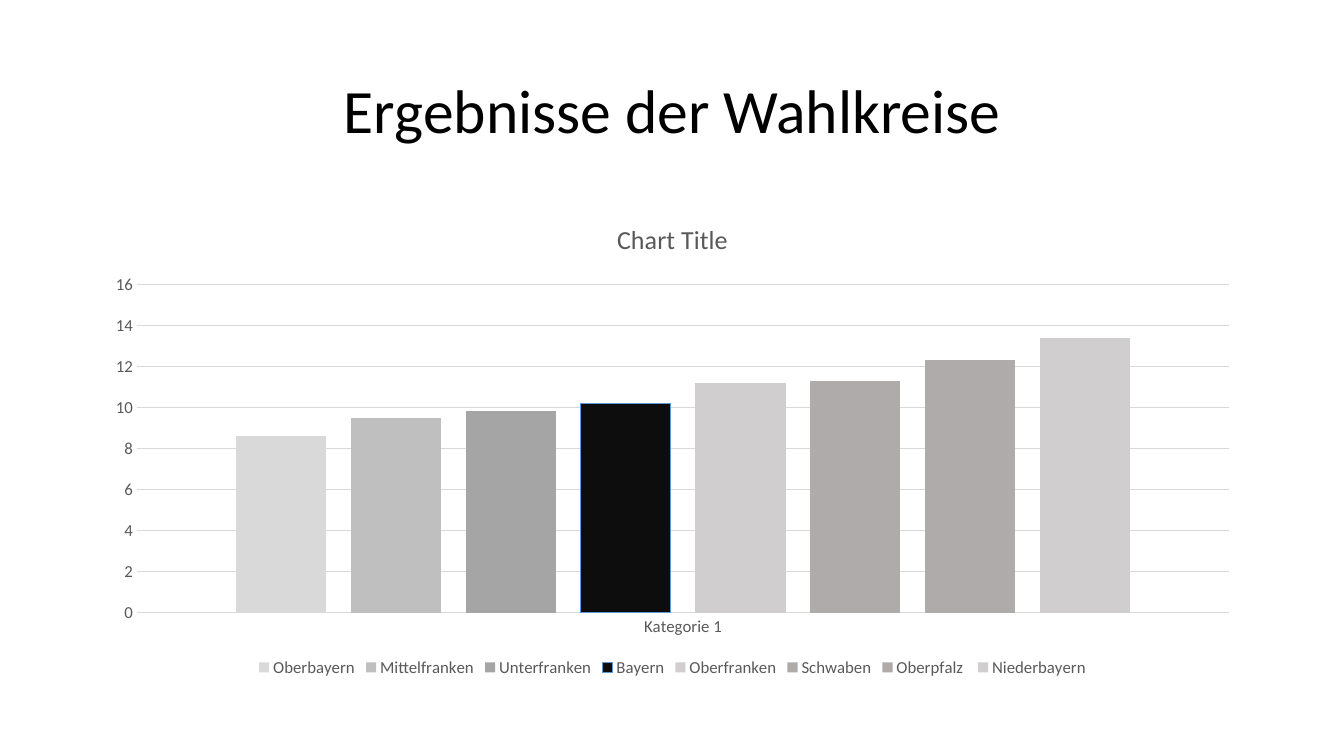
"""Build the slide with the election results of the constituencies."""
import pptx
import pptx.chart.data
import pptx.dml.color
import pptx.enum.chart
import pptx.enum.text
import pptx.util
from pptx.util import Inches

FONT = "Calibri"
TEXT_GREY = "595959"
LINE_GREY = "D9D9D9"
RESULTS = [
    ("Oberbayern", 8.6, "D9D9D9"),
    ("Mittelfranken", 9.5, "BFBFBF"),
    ("Unterfranken", 9.8, "A5A5A5"),
    ("Bayern", 10.2, "0D0D0D"),
    ("Oberfranken", 11.2, "D0CECE"),
    ("Schwaben", 11.3, "AFABAB"),
    ("Oberpfalz ", 12.3, "AFABAB"),
    ("Niederbayern", 13.4, "D0CECE"),
]


def color(value):
    return pptx.dml.color.RGBColor.from_string(value)


def style_font(font, size, value):
    font.name = FONT
    font.size = pptx.util.Pt(size)
    font.bold = False
    font.color.rgb = color(value)


def style_line(line, value):
    line.color.rgb = color(value)
    line.width = pptx.util.Pt(0.75)


def add_title(slide, text):
    title = slide.shapes.title
    title.left, title.top = Inches(0.92), Inches(0.4)
    title.width, title.height = Inches(11.5), Inches(1.45)
    title.text_frame.vertical_anchor = pptx.enum.text.MSO_ANCHOR.MIDDLE
    paragraph = title.text_frame.paragraphs[0]
    paragraph.alignment = pptx.enum.text.PP_ALIGN.CENTER
    paragraph.line_spacing = 0.9
    run = paragraph.add_run()
    run.text = text
    style_font(run.font, 44, "000000")


def style_axis(axis):
    axis.major_tick_mark = pptx.enum.chart.XL_TICK_MARK.NONE
    axis.minor_tick_mark = pptx.enum.chart.XL_TICK_MARK.NONE
    style_font(axis.tick_labels.font, 12, TEXT_GREY)


def style_axes(chart):
    style_axis(chart.category_axis)
    style_line(chart.category_axis.format.line, LINE_GREY)
    value_axis = chart.value_axis
    style_axis(value_axis)
    value_axis.minimum_scale, value_axis.maximum_scale = 0, 16
    value_axis.major_unit = 2
    value_axis.format.line.fill.background()
    value_axis.has_major_gridlines = True
    style_line(value_axis.major_gridlines.format.line, LINE_GREY)


def style_columns(plot):
    plot.gap_width = 219
    plot.overlap = -27
    plot.vary_by_categories = False
    for series, (name, _, fill) in zip(plot.series, RESULTS):
        series.format.fill.solid()
        series.format.fill.fore_color.rgb = color(fill)
        if name == "Bayern":
            style_line(series.format.line, "5B9BD5")


def add_chart_title(chart, text):
    chart.has_title = True
    chart.chart_title.include_in_layout = False
    run = chart.chart_title.text_frame.paragraphs[0].add_run()
    run.text = text
    style_font(run.font, 18.6, TEXT_GREY)


def add_legend(chart):
    chart.has_legend = True
    chart.legend.position = pptx.enum.chart.XL_LEGEND_POSITION.BOTTOM
    chart.legend.include_in_layout = False
    style_font(chart.legend.font, 12, TEXT_GREY)


def add_results_chart(slide):
    data = pptx.chart.data.CategoryChartData()
    data.categories = ["Kategorie 1"]
    for name, value, _ in RESULTS:
        data.add_series(name, [value])
    chart = slide.shapes.add_chart(
        pptx.enum.chart.XL_CHART_TYPE.COLUMN_CLUSTERED,
        Inches(0.92), Inches(2), Inches(11.5), Inches(4.76), data).chart
    style_font(chart.font, 10, "000000")
    add_chart_title(chart, "Chart Title")
    add_legend(chart)
    style_axes(chart)
    style_columns(chart.plots[0])


def main():
    presentation = pptx.Presentation()
    presentation.slide_width = Inches(13.33)
    presentation.slide_height = Inches(7.5)
    slide = presentation.slides.add_slide(presentation.slide_layouts[5])
    add_title(slide, "Ergebnisse der Wahlkreise")
    add_results_chart(slide)
    presentation.save("out.pptx")


if __name__ == "__main__":
    main()
